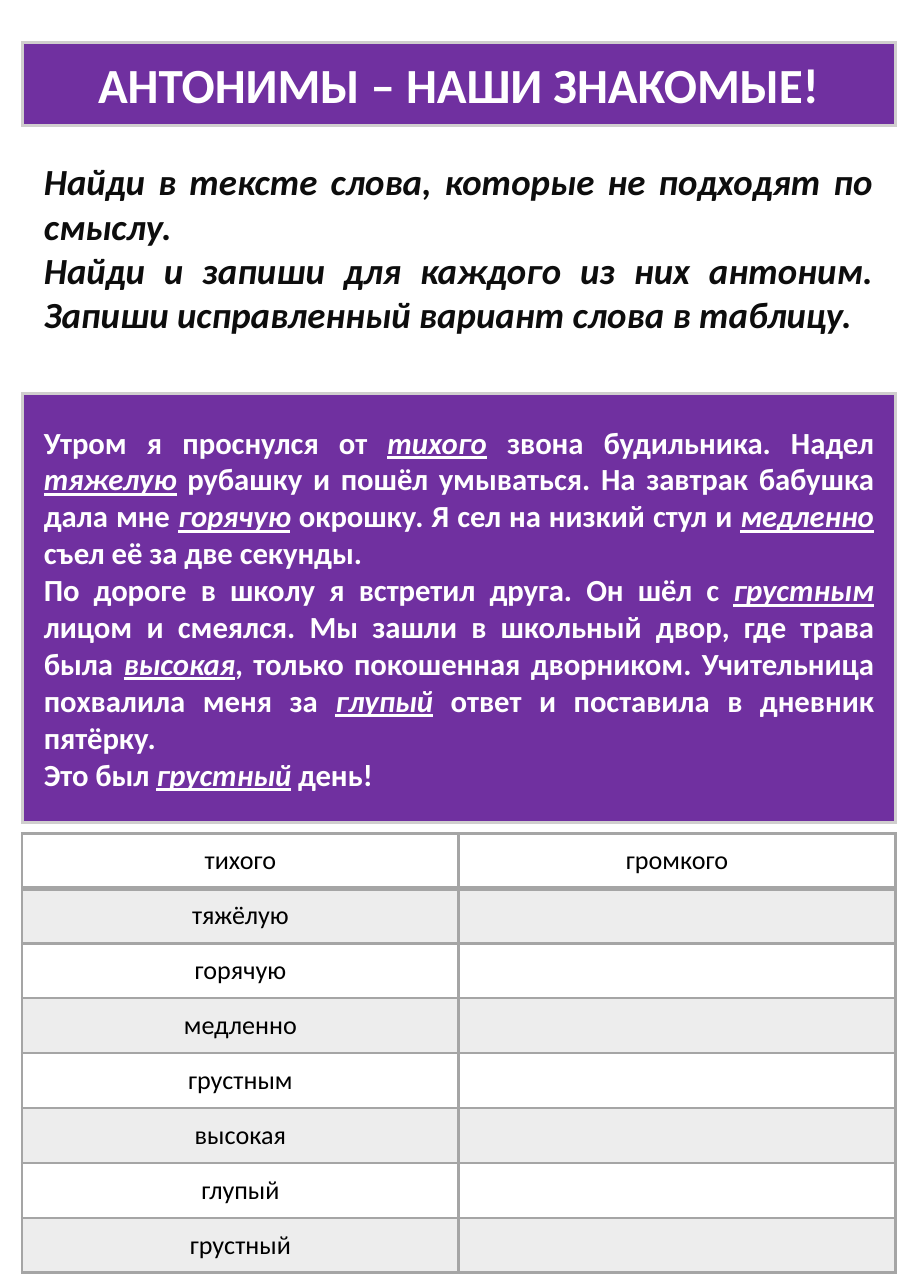
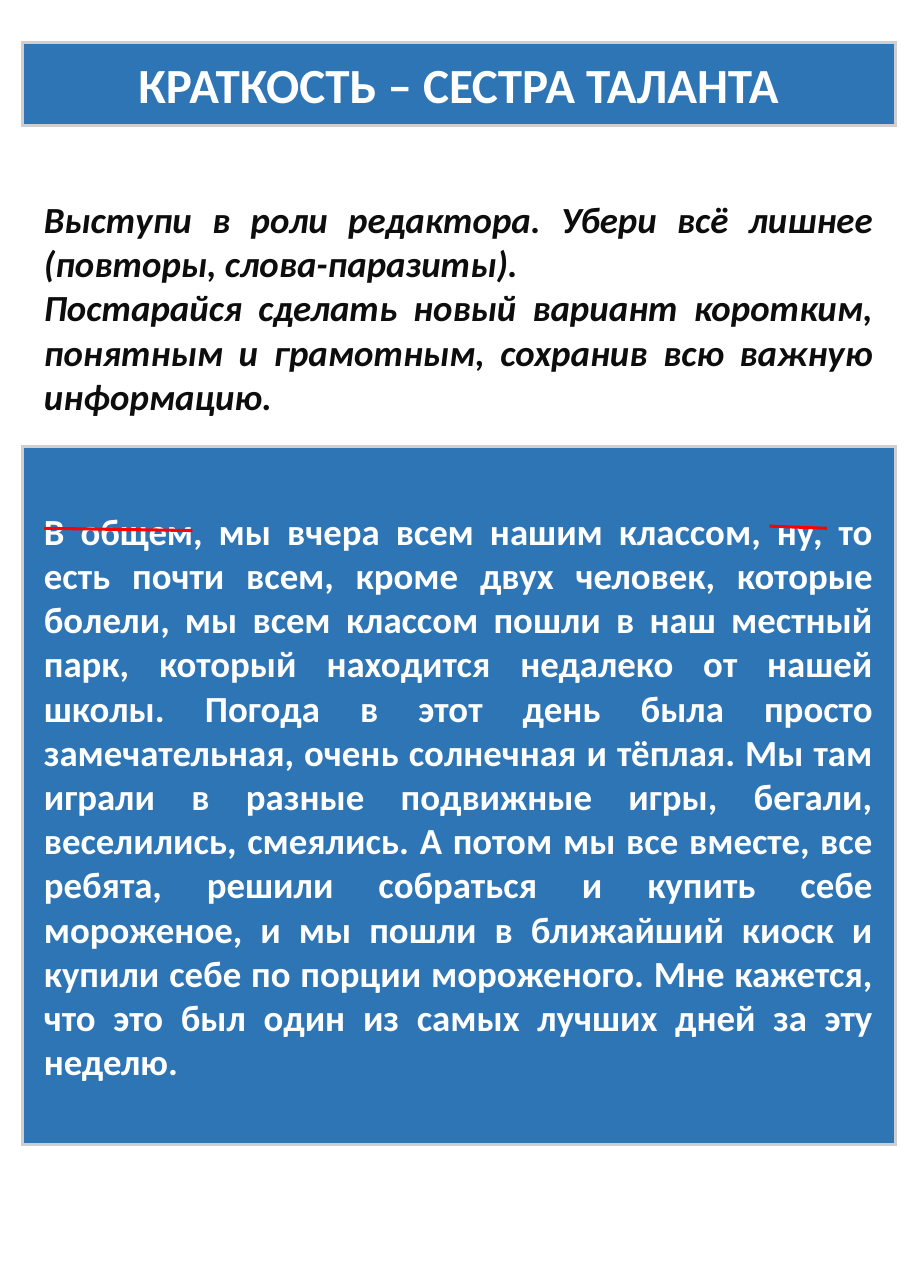
"""Builds two Russian language worksheets: antonyms and concise writing."""
from pptx import Presentation
from pptx.dml.color import RGBColor
from pptx.enum.shapes import MSO_CONNECTOR, MSO_SHAPE
from pptx.enum.text import MSO_ANCHOR, MSO_AUTO_SIZE, PP_ALIGN
from pptx.oxml.xmlchemy import OxmlElement
from pptx.util import Emu, Inches, Pt

FONT = "Calibri"
PURPLE = RGBColor(0x70, 0x30, 0xA0)
BLUE = RGBColor(0x2E, 0x75, 0xB6)
FRAME = RGBColor(0xD0, 0xCE, 0xCE)
WHITE = RGBColor(0xFF, 0xFF, 0xFF)
INK = RGBColor(0x0D, 0x0D, 0x0D)
BLACK = RGBColor(0x00, 0x00, 0x00)
GRAY = RGBColor(0xA5, 0xA5, 0xA5)
RED = RGBColor(0xFF, 0x00, 0x00)

A6_WIDTH, A6_HEIGHT = Emu(3779838), Emu(5327650)
LEFT, WIDTH = 0.1, 3.95
TITLE_TOP, TITLE_HEIGHT = 0.19, 0.38
TABLE_TOP, TABLE_HEIGHT = 3.77, 1.99
TABLE_SIZE = 8.5

WORKSHEETS = [
    {
        "title": "АНТОНИМЫ – НАШИ ЗНАКОМЫЕ!",
        "color": PURPLE,
        "task_place": (0.67, 0.91),
        "task": [
            "Найди в тексте слова, которые не подходят по смыслу.",
            "Найди и запиши для каждого из них антоним. Запиши исправленный "
            "вариант слова в таблицу.",
        ],
        "story_place": (1.78, 1.94),
        "story_size": 10,
        "story": [
            "Утром я проснулся от *тихого* звона будильника. Надел *тяжелую* "
            "рубашку и пошёл умываться. На завтрак бабушка дала мне *горячую* "
            "окрошку. Я сел на низкий стул и *медленно* съел её за две секунды.",
            "По дороге в школу я встретил друга. Он шёл с *грустным* лицом и "
            "смеялся. Мы зашли в школьный двор, где трава была *высокая*, только "
            "покошенная дворником. Учительница похвалила меня за *глупый* ответ "
            "и поставила в дневник пятёрку.",
            "Это был *грустный* день!",
        ],
        "answers": [
            ("тихого", "громкого"), ("тяжёлую", ""), ("горячую", ""),
            ("медленно", ""), ("грустным", ""), ("высокая", ""),
            ("глупый", ""), ("грустный", ""),
        ],
        "strikes": [],
    },
    {
        "title": "КРАТКОСТЬ – СЕСТРА ТАЛАНТА",
        "color": BLUE,
        "task_place": (0.84, 1.11),
        "task": [
            "Выступи в роли редактора. Убери всё лишнее (повторы, "
            "слова-паразиты).",
            "Постарайся сделать новый вариант коротким, понятным и грамотным, "
            "сохранив всю важную информацию.",
        ],
        "story_place": (2.02, 3.16),
        "story_size": 12,
        "story": [
            "В общем, мы вчера всем нашим классом, ну, то есть почти всем, кроме "
            "двух человек, которые болели, мы всем классом пошли в наш местный "
            "парк, который находится недалеко от нашей школы. Погода в этот день "
            "была просто замечательная, очень солнечная и тёплая. Мы там играли "
            "в разные подвижные игры, бегали, веселились, смеялись. А потом мы "
            "все вместе, все ребята, решили собраться и купить себе мороженое, "
            "и мы пошли в ближайший киоск и купили себе по порции мороженого. "
            "Мне кажется, что это был один из самых лучших дней за эту неделю.",
        ],
        "answers": [],
        "strikes": [(0.2, 2.39, 0.87, 2.4), (3.48, 2.38, 3.74, 2.39)],
    },
]


def style(font, size, color, bold=False, italic=False):
    font.name, font.size, font.color.rgb = FONT, Pt(size), color
    font.bold, font.italic = bold, italic


def add_child(parent, tag, **attributes):
    child = OxmlElement(tag)
    for name, value in attributes.items():
        child.set(name, str(value))
    parent.append(child)
    return child


def write(frame, lines, align, size, color, italic=False):
    frame.word_wrap = True
    for index, line in enumerate(lines):
        para = frame.paragraphs[0] if index == 0 else frame.add_paragraph()
        para.alignment = align
        for part, words in enumerate(line.split("*")):
            marked = part % 2 == 1
            span = para.add_run()
            span.text = words
            style(span.font, size, color, True, italic or marked)
            if marked:
                span.font.underline = True


def add_panel(page, place, color, lines, align, size):
    top, height = place
    panel = page.shapes.add_shape(MSO_SHAPE.RECTANGLE, Inches(LEFT), Inches(top),
                                  Inches(WIDTH), Inches(height))
    panel.shadow.inherit = False
    panel.fill.solid()
    panel.fill.fore_color.rgb = color
    panel.line.color.rgb = FRAME
    panel.line.width = Pt(1)
    add_child(panel._element.spPr.ln, "a:miter", lim=800000)
    panel.text_frame.vertical_anchor = MSO_ANCHOR.MIDDLE
    write(panel.text_frame, lines, align, size, WHITE)


def add_task(page, place, lines):
    top, height = place
    box = page.shapes.add_textbox(Inches(LEFT), Inches(top), Inches(WIDTH), Inches(height))
    write(box.text_frame, lines, PP_ALIGN.JUSTIFY, 12, INK, italic=True)
    box.text_frame.auto_size = MSO_AUTO_SIZE.SHAPE_TO_FIT_TEXT


def set_borders(cell, row):
    properties = cell._tc.get_or_add_tcPr()
    for side in "LRTB":
        heavy = (row, side) in ((0, "B"), (1, "T"))
        line = add_child(properties, f"a:ln{side}", w=Pt(2 if heavy else 1))
        add_child(add_child(line, "a:solidFill"), "a:srgbClr", val=GRAY)


def set_band(cell, row):
    if row % 2 == 0:
        cell.fill.background()
        return
    cell.fill.solid()
    cell.fill.fore_color.rgb = GRAY
    color = cell._tc.tcPr.find("{*}solidFill/{*}srgbClr")
    add_child(color, "a:alpha", val=20000)


def add_answers(page, answers):
    table = page.shapes.add_table(len(answers), 2, Inches(LEFT), Inches(TABLE_TOP),
                                  Inches(WIDTH), Inches(TABLE_HEIGHT)).table
    table.first_row = table.horz_banding = False
    for row, words in enumerate(answers):
        for column, word in enumerate(words):
            cell = table.cell(row, column)
            cell.vertical_anchor = MSO_ANCHOR.MIDDLE
            set_borders(cell, row)
            set_band(cell, row)
            para = cell.text_frame.paragraphs[0]
            para.alignment = PP_ALIGN.CENTER
            if word:
                para.text = word
                style(para.runs[0].font, TABLE_SIZE, BLACK)
            else:
                add_child(para._p, "a:endParaRPr", sz=int(TABLE_SIZE * 100))


def add_strike(page, ends):
    strike = page.shapes.add_connector(MSO_CONNECTOR.STRAIGHT, *map(Inches, ends))
    strike.line.color.rgb = RED
    strike.line.width = Pt(1)
    add_child(strike._element.spPr, "a:effectLst")


def main():
    deck = Presentation()
    deck.slide_width, deck.slide_height = A6_WIDTH, A6_HEIGHT
    for sheet in WORKSHEETS:
        page = deck.slides.add_slide(deck.slide_layouts[6])
        add_panel(page, (TITLE_TOP, TITLE_HEIGHT), sheet["color"], [sheet["title"]],
                  PP_ALIGN.CENTER, 16)
        add_panel(page, sheet["story_place"], sheet["color"], sheet["story"],
                  PP_ALIGN.JUSTIFY, sheet["story_size"])
        add_task(page, sheet["task_place"], sheet["task"])
        if sheet["answers"]:
            add_answers(page, sheet["answers"])
        for ends in sheet["strikes"]:
            add_strike(page, ends)
    deck.save("out.pptx")


if __name__ == "__main__":
    main()
